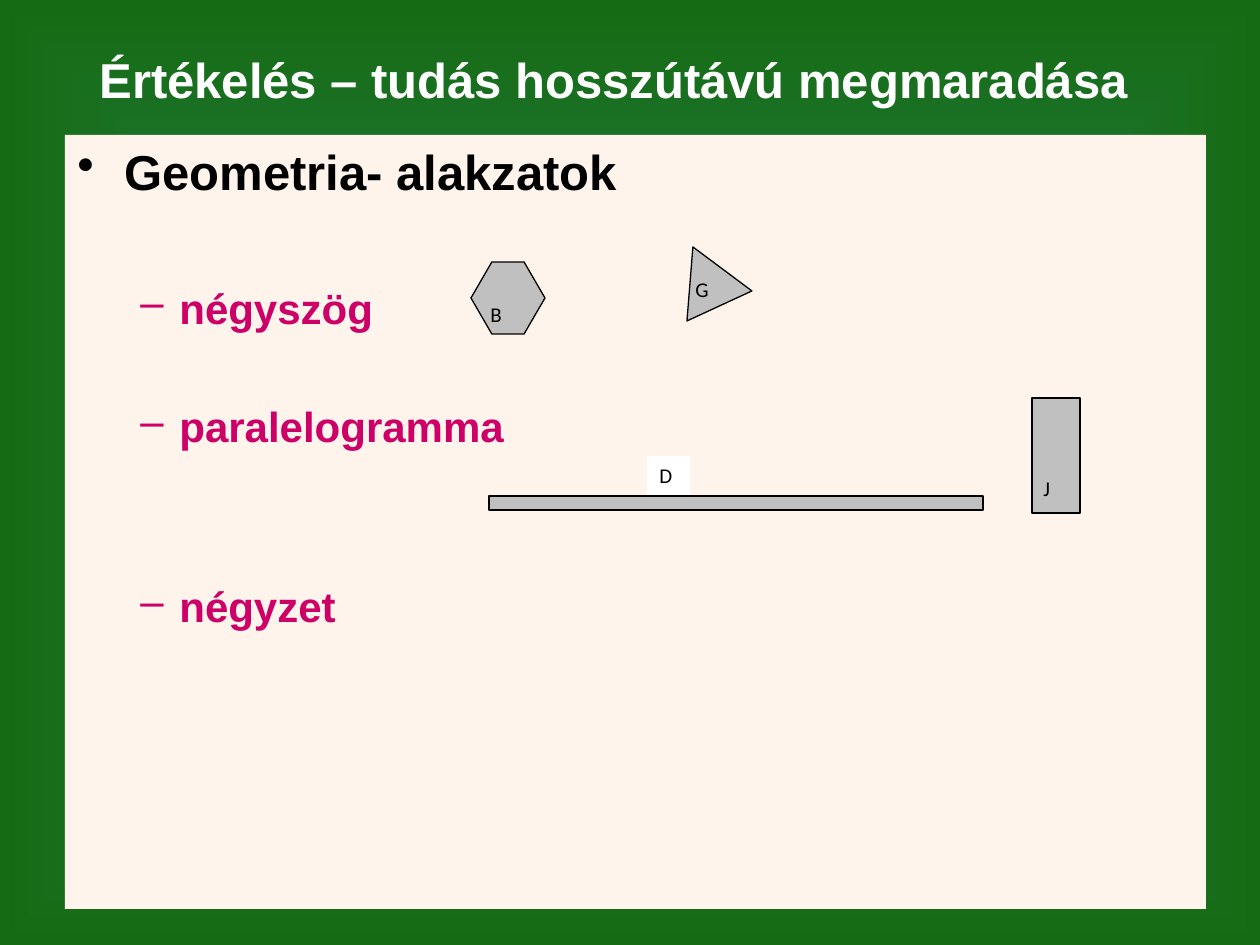
from dataclasses import dataclass
from typing import NamedTuple

from lxml import etree
from pptx import Presentation
from pptx.dml.color import RGBColor as RGB
from pptx.enum.shapes import MSO_SHAPE as SHAPE
from pptx.enum.text import MSO_ANCHOR as ANCHOR, PP_ALIGN as ALIGN
from pptx.oxml import parse_xml
from pptx.oxml.ns import nsdecls, qn
from pptx.util import Emu, Pt

PX_PER_INCH = 126


@dataclass(frozen=True)
class Theme:
    heading_font: str = "Arial"
    label_font: str = "Calibri"
    white: str = "FFFFFF"
    black: str = "000000"
    panel: str = "FEF4EC"
    figure: str = "C0C0C0"
    accent: str = "CC0066"
    heading_size: int = 28
    item_size: int = 24
    label_size: int = 12
    outline: float = 0.75
    background: tuple = ((0, "DDEBCF"), (21, "257D47"), (100, "156B13"))


THEME = Theme()


class Box(NamedTuple):
    x: int
    y: int
    w: int
    h: int


class Item(NamedTuple):
    text: str
    bullet: str
    size: int
    color: str
    indent: int
    hanging: int
    space_before: int


class Figure(NamedTuple):
    kind: SHAPE
    box: Box


class Label(NamedTuple):
    text: str
    box: Box
    fill: str | None = None


TITLE = "Értékelés – tudás hosszútávú megmaradása"


def sub_item(text: str, space_before: int) -> Item:
    return Item(text, "–", THEME.item_size, THEME.accent, 102, 39, space_before)


ITEMS = [
    Item("Geometria- alakzatok", "•", THEME.heading_size, THEME.black, 47, 47, 3),
    sub_item("négyszög", 47),
    sub_item("paralelogramma", 39),
    sub_item("négyzet", 74),
]
FIGURES = [
    Figure(SHAPE.RECTANGLE, Box(489, 496, 494, 14)),
    Figure(SHAPE.RECTANGLE, Box(1032, 398, 48, 115)),
    Figure(SHAPE.HEXAGON, Box(471, 262, 74, 72)),
]
TRIANGLE = [(693, 247), (687, 321), (752, 291)]
LABELS = [
    Label("D", Box(647, 456, 43, 49), THEME.white),
    Label("G", Box(683, 270, 44, 49)),
    Label("J", Box(1031, 469, 34, 49)),
    Label("B", Box(478, 295, 43, 49)),
]


def px(n: int) -> Emu:
    return Emu(round(n * 914400 / PX_PER_INCH))


def emu_box(box: Box) -> list[Emu]:
    return [px(n) for n in box]


def set_font(p, name: str, size: int, color: str, bold: bool = False) -> None:
    f = p.font
    f.name, f.size, f.bold = name, Pt(size), bold
    f.color.rgb = RGB.from_string(color)


def paint(sp, fill: str, outlined: bool = True) -> None:
    sp.shadow.inherit = False
    sp.fill.solid()
    sp.fill.fore_color.rgb = RGB.from_string(fill)
    if outlined:
        sp.line.color.rgb = RGB.from_string(THEME.black)
        sp.line.width = Pt(THEME.outline)
    else:
        sp.line.fill.background()


def set_background(s) -> None:
    """Apply a rectangular gradient that spreads from the slide centre."""
    fill = s.background.fill
    fill.gradient()
    old = s.background._cSld.find(f".//{qn('a:gradFill')}")
    stops = "".join(
        f'<a:gs pos="{pos * 1000}"><a:srgbClr val="{color}"/></a:gs>'
        for pos, color in THEME.background
    )
    new = parse_xml(
        f'<a:gradFill rotWithShape="1" {nsdecls("a")}><a:gsLst>{stops}</a:gsLst>'
        '<a:path path="rect"><a:fillToRect l="50000" t="50000" r="50000" b="50000"/>'
        "</a:path></a:gradFill>"
    )
    old.getparent().replace(old, new)


def add_title(s) -> None:
    sp = s.shapes.title
    sp.left, sp.top, sp.width, sp.height = emu_box(Box(73, 45, 1081, 68))
    tf = sp.text_frame
    tf.text = TITLE
    tf.word_wrap = True
    tf.vertical_anchor = ANCHOR.MIDDLE
    p = tf.paragraphs[0]
    p.alignment = ALIGN.CENTER
    set_font(p, THEME.heading_font, THEME.heading_size, THEME.white, bold=True)


def add_item(p, item: Item) -> None:
    p.text = item.text
    p.alignment = ALIGN.LEFT
    p.space_before = Pt(item.space_before)
    set_font(p, THEME.heading_font, item.size, item.color, bold=True)
    pPr = p._p.get_or_add_pPr()
    pPr.set("marL", str(px(item.indent)))
    pPr.set("indent", str(-px(item.hanging)))
    bullet = etree.Element(qn("a:buChar"), char=item.bullet)
    pPr.find(qn("a:defRPr")).addprevious(bullet)


def add_panel(s) -> None:
    sp = s.shapes.add_shape(SHAPE.RECTANGLE, *emu_box(Box(65, 135, 1141, 774)))
    paint(sp, THEME.panel, outlined=False)
    tf = sp.text_frame
    tf.word_wrap = True
    tf.vertical_anchor = ANCHOR.TOP
    for i, item in enumerate(ITEMS):
        add_item(tf.add_paragraph() if i else tf.paragraphs[0], item)


def add_figure(s, figure: Figure) -> None:
    sp = s.shapes.add_shape(figure.kind, *emu_box(figure.box))
    if figure.kind == SHAPE.HEXAGON:
        sp.adjustments[0] = 0.29
    paint(sp, THEME.figure)


def add_triangle(s) -> None:
    start, *rest = [(px(x), px(y)) for x, y in TRIANGLE]
    builder = s.shapes.build_freeform(*start)
    builder.add_line_segments(rest, close=True)
    paint(builder.convert_to_shape(), THEME.figure)


def add_label(s, label: Label) -> None:
    sp = s.shapes.add_textbox(*emu_box(label.box))
    if label.fill:
        sp.fill.solid()
        sp.fill.fore_color.rgb = RGB.from_string(label.fill)
    sp.text_frame.word_wrap = True
    p = sp.text_frame.paragraphs[0]
    p.text = label.text
    set_font(p, THEME.label_font, THEME.label_size, THEME.black)


def main() -> None:
    prs = Presentation()
    prs.slide_width, prs.slide_height = px(1260), px(945)
    s = prs.slides.add_slide(prs.slide_layouts[5])
    set_background(s)
    add_title(s)
    add_panel(s)
    backed = [label for label in LABELS if label.fill]
    plain = [label for label in LABELS if not label.fill]
    for label in backed:
        add_label(s, label)
    for figure in FIGURES:
        add_figure(s, figure)
    add_triangle(s)
    for label in plain:
        add_label(s, label)
    prs.save("out.pptx")


if __name__ == "__main__":
    main()
